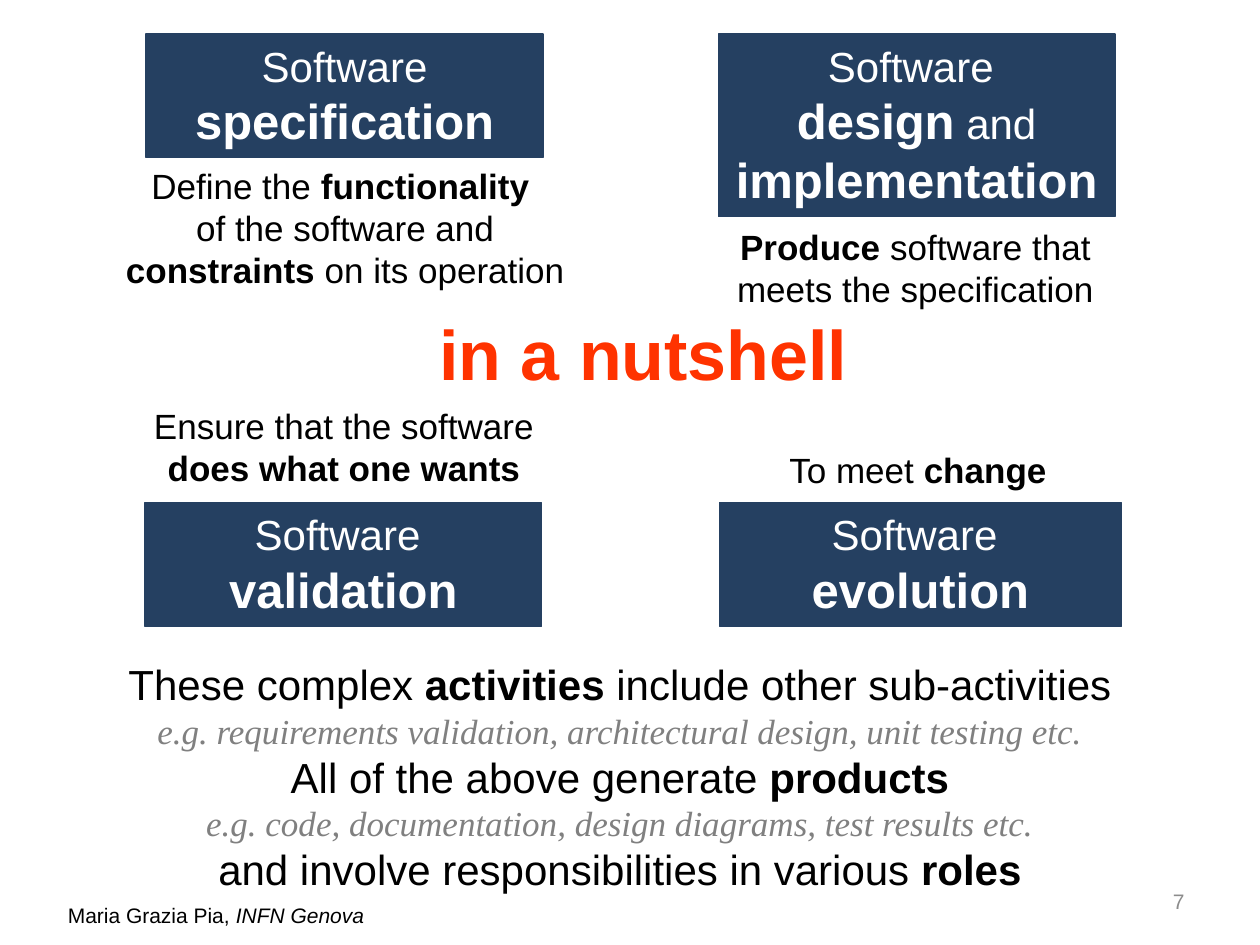
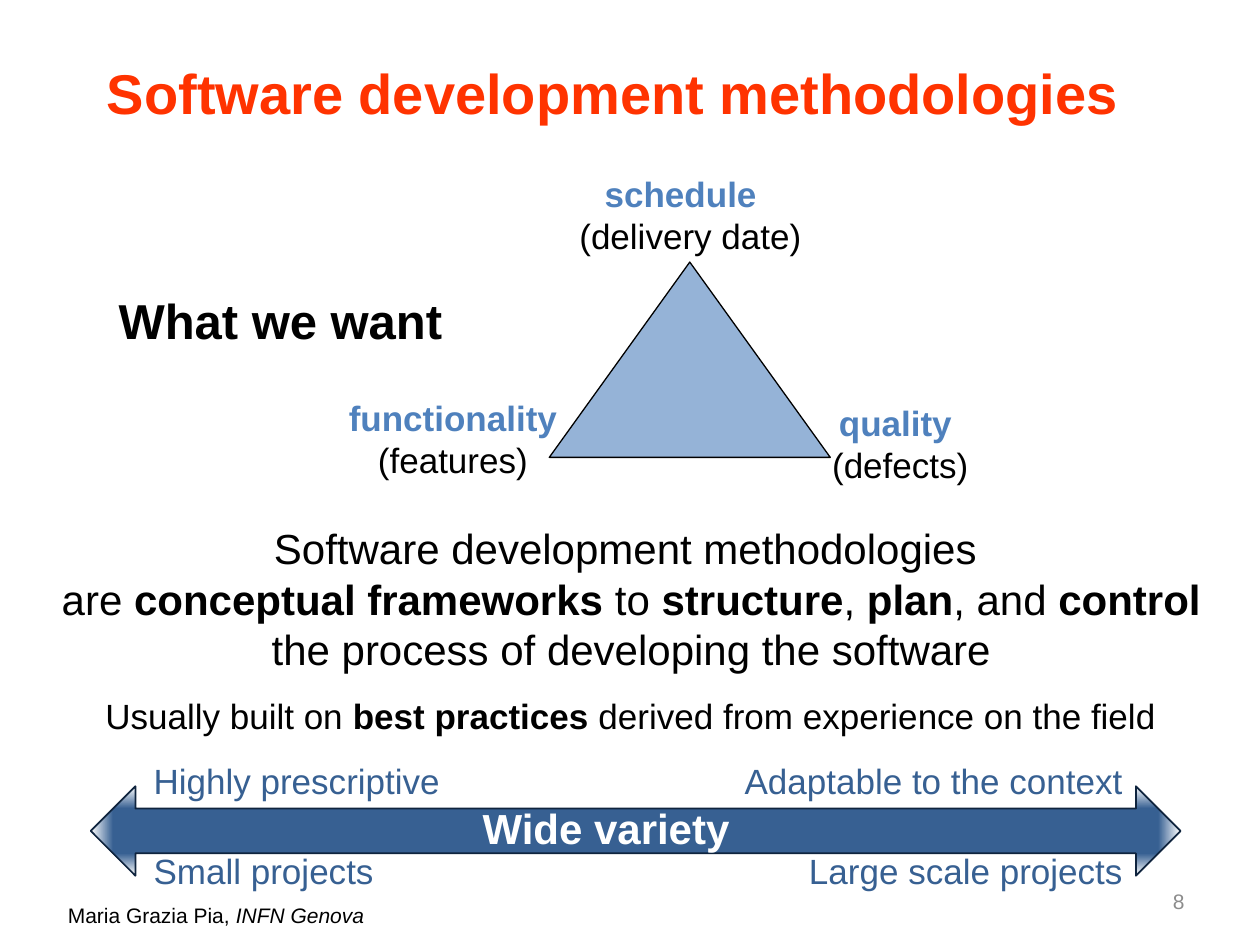
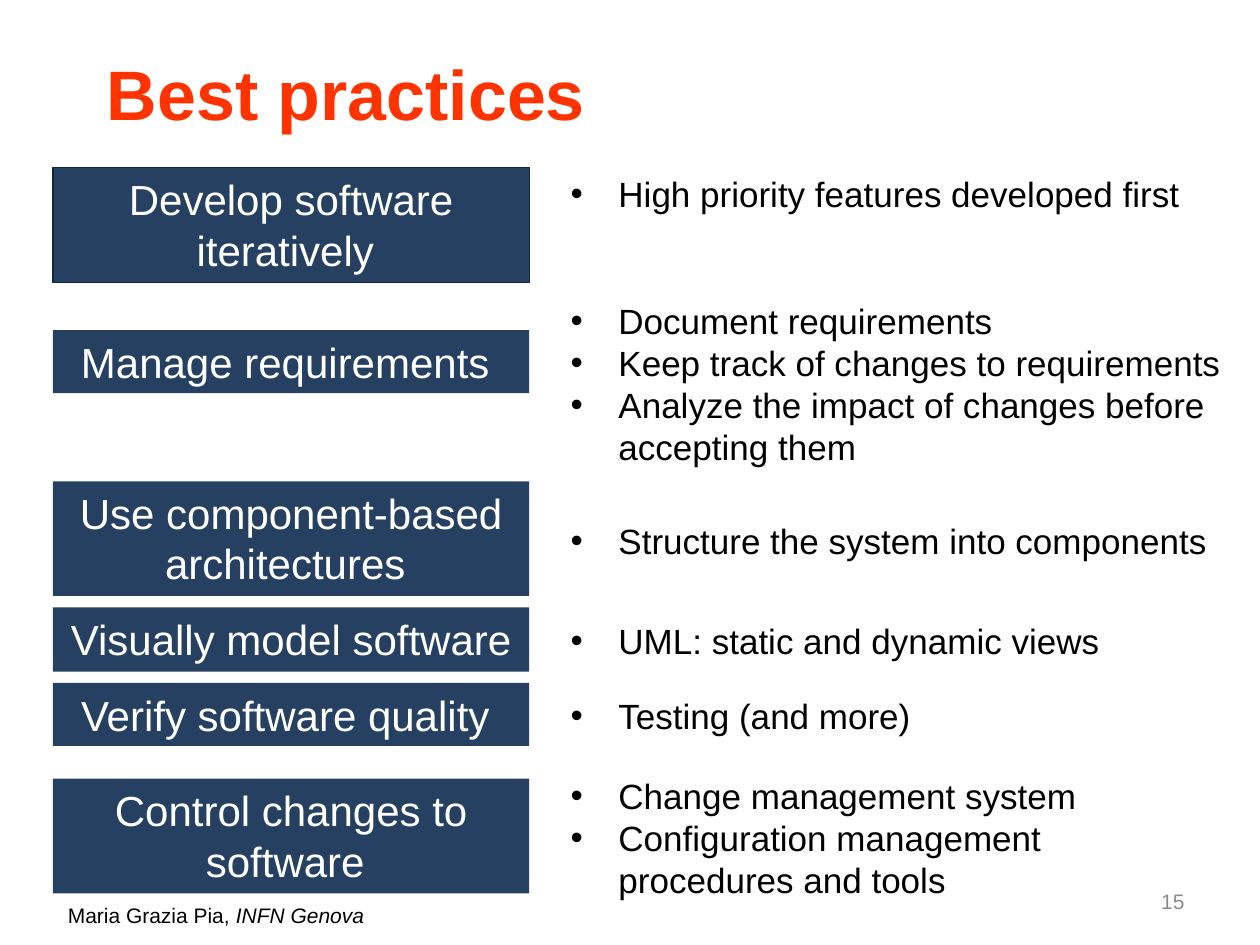
from dataclasses import dataclass, replace

from lxml import etree
from pptx import Presentation
from pptx.dml.color import RGBColor
from pptx.enum.shapes import MSO_SHAPE as Shape
from pptx.enum.text import MSO_ANCHOR as Anchor, PP_ALIGN as Align
from pptx.oxml import parse_xml
from pptx.oxml.ns import nsdecls, qn
from pptx.util import Inches, Pt

NAVY = RGBColor(0x25, 0x40, 0x61)
DARK_NAVY = RGBColor(0x0F, 0x24, 0x3E)
STEEL = RGBColor(0x37, 0x60, 0x92)
BLUE = RGBColor(0x4F, 0x81, 0xBD)
PALE_BLUE = RGBColor(0x95, 0xB3, 0xD7)
ORANGE = RGBColor(0xFF, 0x33, 0x00)
GREY = RGBColor(0x80, 0x80, 0x80)
NUMBER_GREY = RGBColor(0x8C, 0x8C, 0x8C)
BLACK = RGBColor(0, 0, 0)
WHITE = RGBColor(0xFF, 0xFF, 0xFF)


@dataclass(frozen=True)
class Style:
    """Paragraph look; strong_size applies to words between asterisks."""
    size: int
    color: RGBColor = BLACK
    bold: bool = False
    italic: bool = False
    font: str = "Arial"
    align: Align = Align.CENTER
    strong_size: int = 0
    strong_italic: bool = False
    bullet: bool = False


BODY = Style(20)
LARGE = Style(24)
EXAMPLE = Style(20, GREY, italic=True, font="Times New Roman")
BAND = Style(24, WHITE, strong_size=28)
CORNER = Style(20, BLUE, bold=True)
BULLET = Style(20, align=Align.LEFT, bullet=True)
TITLE = Style(40, ORANGE, bold=True, align=Align.LEFT)
FOOTER = Style(12, align=Align.LEFT, strong_italic=True)
NUMBER = Style(12, NUMBER_GREY, align=Align.RIGHT)

TITLE_BOX = (0.75, 0.38, 8.5, 0.71)
AUTHOR = "Maria Grazia Pia,* INFN Genova*"

# band text, band box, explanation, explanation box, explanation side inset
ACTIVITIES = [
    ("Software *specification*", (1.16, 0.27, 3.15, 0.98),
     "Define the *functionality \n*of the software and *constraints* on its operation",
     (0.97, 1.26, 3.54, 1.11), 0),
    ("Software \n*design* and *implementation*", (5.7, 0.27, 3.15, 1.45),
     "*Produce* software that meets the specification",
     (5.69, 1.74, 3.15, 0.77), 0.1),
    ("Software \n*validation*", (1.15, 3.99, 3.15, 0.98),
     "Ensure that the software *does what one wants*",
     (1.02, 3.16, 3.42, 0.77), 0.1),
    ("Software \n*evolution*", (5.71, 3.99, 3.19, 0.98),
     "To meet *change*", (5.71, 3.51, 3.15, 0.44), 0.1),
]
SUMMARY = [
    ("These complex *activities* include other sub-activities", LARGE),
    ("e.g. requirements validation, architectural design, unit testing etc.", EXAMPLE),
    ("All of the above generate *products*", LARGE),
    ("e.g. code, documentation, design diagrams, test results etc.", EXAMPLE),
    ("and involve responsibilities in various *roles*", LARGE),
]

GOALS = [
    ("schedule  ", "(delivery date)", (4.4, 1.32, 2.16, 0.77)),
    ("functionality", "(features)", (2.22, 3.1, 2.75, 0.77)),
    ("quality ", "(defects)", (6.35, 3.14, 1.59, 0.77)),
]
DEFINITION = [
    "Software development methodologies ",
    "are *conceptual frameworks *to *structure*, *plan*, and *control *",
    "the process of developing the software",
]
# left end and right end of the range, top
EXTREMES = [
    ("Highly prescriptive", "Adaptable to the context", 5.98),
    ("Small projects", "Large scale projects", 6.69),
]

# practice, band top, band height, details, details top, details width
PRACTICES = [
    ("Develop software iteratively ", 1.33, 0.91,
     ["High priority features developed first"], 1.32, 5.22),
    ("Manage requirements ", 2.62, 0.5,
     ["Document requirements", "Keep track of changes to requirements",
      "Analyze the impact of changes before accepting them"], 2.33, 5.45),
    ("Use component-based architectures ", 3.82, 0.91,
     ["Structure the system into components"], 4.07, 5.32),
    ("Visually model software ", 4.82, 0.51,
     ["UML: static and dynamic views"], 4.87, 4.57),
    ("Verify software quality ", 5.42, 0.5, ["Testing (and more)"], 5.46, 4.2),
    ("Control changes to software ", 6.18, 0.91,
     ["Change management system",
      "Configuration management procedures and tools"], 6.1, 5.21),
]


def add_bullet(paragraph):
    properties = paragraph._p.get_or_add_pPr()
    properties.set("marL", str(Inches(0.38)))
    properties.set("indent", str(-Inches(0.38)))
    etree.SubElement(properties, qn("a:buFont")).set("typeface", "Arial")
    etree.SubElement(properties, qn("a:buChar")).set("char", "•")


def add_runs(paragraph, text, style):
    """Words between asterisks are strong; a newline breaks the line."""
    for index, part in enumerate(text.split("*")):
        for line_index, line in enumerate(part.split("\n")):
            if line_index:
                paragraph.add_line_break()
            if not line:
                continue
            run = paragraph.add_run()
            run.text = line
            if index % 2:
                if style.strong_italic:
                    run.font.italic = True
                else:
                    run.font.bold = True
                if style.strong_size:
                    run.font.size = Pt(style.strong_size)


def fill_text(shape, lines, anchor=Anchor.TOP, inset=0.1):
    frame = shape.text_frame
    frame.word_wrap = True
    frame.vertical_anchor = anchor
    frame.margin_left = frame.margin_right = Inches(inset)
    for index, (text, style) in enumerate(lines):
        paragraph = frame.add_paragraph() if index else frame.paragraphs[0]
        paragraph.alignment = style.align
        if style.bullet:
            add_bullet(paragraph)
        font = paragraph.font
        font.name, font.size = style.font, Pt(style.size)
        font.bold, font.italic = style.bold, style.italic
        font.color.rgb = style.color
        add_runs(paragraph, text, style)


def add_text(slide, box, lines, **options):
    fill_text(slide.shapes.add_textbox(*map(Inches, box)), lines, **options)


def add_figure(slide, kind, box, fill, line=None, line_width=0.75):
    figure = slide.shapes.add_shape(kind, *map(Inches, box))
    figure.shadow.inherit = False
    figure.fill.solid()
    figure.fill.fore_color.rgb = fill
    if line is None:
        figure.line.fill.background()
    else:
        figure.line.color.rgb = line
        figure.line.width = Pt(line_width)
    return figure


def add_band(slide, box, text, line=None):
    fill_text(add_figure(slide, Shape.RECTANGLE, box, NAVY, line), [(text, BAND)])


def fade_edges(figure, inner, outer):
    """Gradient that spreads from the centre and fades at the outline."""
    solid = figure._element.spPr.find(qn("a:solidFill"))
    gradient = parse_xml(
        f'<a:gradFill {nsdecls("a")} rotWithShape="1"><a:gsLst>'
        f'<a:gs pos="50000"><a:srgbClr val="{inner}"/></a:gs>'
        f'<a:gs pos="100000"><a:srgbClr val="{outer}"/></a:gs></a:gsLst>'
        '<a:path path="rect"><a:fillToRect l="50000" t="50000" r="50000" b="50000"/>'
        '</a:path></a:gradFill>')
    solid.getparent().replace(solid, gradient)


def new_slide(deck, number, title, title_style=TITLE, title_box=TITLE_BOX):
    slide = deck.slides.add_slide(deck.slide_layouts[6])
    add_text(slide, (0.44, 7.11, 2.8, 0.3), [(AUTHOR, FOOTER)], anchor=Anchor.MIDDLE)
    add_text(slide, title_box, [(title, title_style)], anchor=Anchor.MIDDLE)
    add_text(slide, (7.17, 6.95, 2.33, 0.4), [(str(number), NUMBER)],
             anchor=Anchor.MIDDLE)
    return slide


def build_nutshell(deck):
    slide = new_slide(deck, 7, "in a nutshell", replace(TITLE, align=Align.CENTER),
                      (3.23, 2.44, 3.75, 0.71))
    for name, band_box, meaning, meaning_box, inset in ACTIVITIES:
        add_band(slide, band_box, name, NAVY)
        add_text(slide, meaning_box, [(meaning, BODY)], inset=inset)
    add_text(slide, (0.59, 5.18, 8.66, 1.99), SUMMARY)


def build_methodologies(deck):
    slide = new_slide(deck, 8, "Software development methodologies",
                      replace(TITLE, size=32))
    variety = add_figure(slide, Shape.LEFT_RIGHT_ARROW, (0.72, 6.24, 8.65, 0.71),
                         STEEL, DARK_NAVY, 1)
    fade_edges(variety, STEEL, WHITE)
    add_figure(slide, Shape.ISOSCELES_TRIANGLE, (4.36, 2.08, 2.23, 1.55),
               PALE_BLUE, BLACK)
    for goal, measure, box in GOALS:
        add_text(slide, box, [(goal, CORNER), (measure, BODY)])
    add_text(slide, (0.78, 2.26, 2.89, 0.57), [("What we want", Style(28, bold=True))])
    add_text(slide, (0.36, 4.1, 9.3, 1.31), [(line, LARGE) for line in DEFINITION])
    add_text(slide, (0.71, 5.46, 8.59, 0.44),
             [("Usually built on *best practices *derived from experience on the field",
               BODY)])
    for left_end, right_end, top in EXTREMES:
        add_text(slide, (1.12, top, 2.62, 0.44),
                 [(left_end, Style(20, STEEL, align=Align.LEFT))])
        add_text(slide, (5.75, top, 3.26, 0.44),
                 [(right_end, Style(20, STEEL, align=Align.RIGHT))])
    add_text(slide, (3.34, 6.32, 2.94, 0.5),
             [("Wide variety", Style(24, WHITE, bold=True))])


def build_practices(deck):
    slide = new_slide(deck, 15, "Best practices")
    for index, (name, top, height, details, details_top, width) in enumerate(PRACTICES):
        add_band(slide, (0.42, top, 3.78, height), name, None if index else DARK_NAVY)
        add_text(slide, (4.43, details_top, width, 0.03 + 0.36 * len(details)),
                 [(detail, BULLET) for detail in details])


def main():
    deck = Presentation()
    deck.slide_width, deck.slide_height = Inches(10), Inches(7.5)
    build_nutshell(deck)
    build_methodologies(deck)
    build_practices(deck)
    deck.save("out.pptx")


if __name__ == "__main__":
    main()
